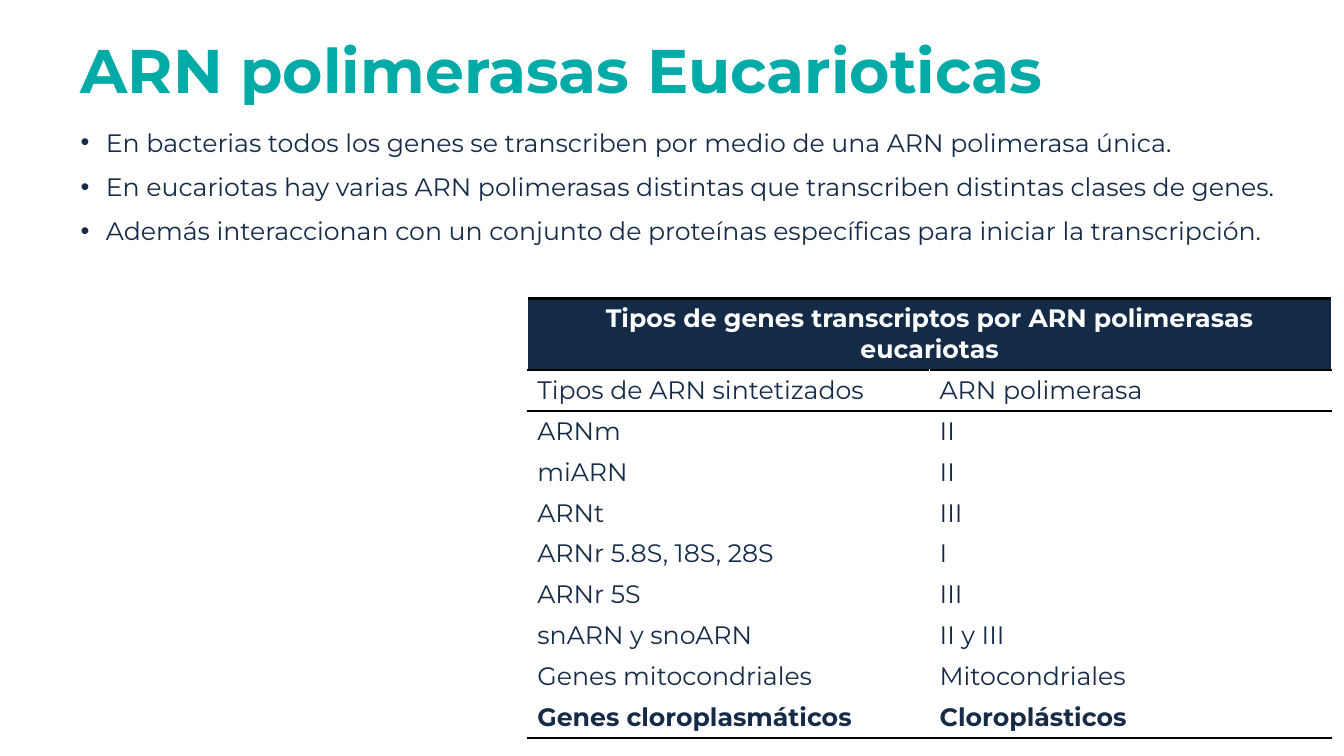
from lxml.etree import SubElement
from pptx import Presentation
from pptx.dml.color import RGBColor
from pptx.enum.text import MSO_ANCHOR, MSO_AUTO_SIZE, PP_ALIGN
from pptx.oxml import parse_xml
from pptx.oxml.ns import nsdecls, qn
from pptx.util import Inches, Pt

TEAL = RGBColor(0x00, 0xAA, 0xA7)
NAVY = RGBColor(0x15, 0x2B, 0x48)
HEADER_NAVY = RGBColor(0x14, 0x2B, 0x48)
WHITE = RGBColor(0xFF, 0xFF, 0xFF)
BLACK = RGBColor(0x00, 0x00, 0x00)

STATEMENTS = [
    "En bacterias todos los genes se transcriben por medio de una ARN polimerasa única.",
    "En eucariotas hay varias ARN polimerasas distintas que transcriben distintas clases de genes.",
    "Además interaccionan con un conjunto de proteínas específicas para iniciar la transcripción.",
]
TABLE_HEADING = "Tipos de genes transcriptos por ARN polimerasas eucariotas"
GENE_TYPES = [
    ("Tipos de ARN sintetizados", "ARN polimerasa"),
    ("ARNm", "II"),
    ("miARN", "II"),
    ("ARNt", "III"),
    ("ARNr 5.8S, 18S, 28S", "I"),
    ("ARNr 5S", "III"),
    ("snARN y snoARN", "II y III"),
    ("Genes mitocondriales", "Mitocondriales"),
    ("Genes cloroplasmáticos", "Cloroplásticos"),
]


class SlideBuilder:
    """Holds the text style and the slide being built."""

    font_name = "Montserrat"
    text_size = 18

    def __init__(self, slide):
        self.slide = slide

    def style(self, paragraph, color, size=text_size, bold=False):
        for run in paragraph.runs:
            run.font.name = self.font_name
            run.font.size = Pt(size)
            run.font.bold = bold
            run.font.color.rgb = color

    def place(self, holder, left, top, width, height):
        holder.left, holder.top = Inches(left), Inches(top)
        holder.width, holder.height = Inches(width), Inches(height)
        holder.text_frame.word_wrap = True
        holder.text_frame.auto_size = MSO_AUTO_SIZE.NONE
        return holder.text_frame

    def title(self, text, *box):
        frame = self.place(self.slide.shapes.title, *box)
        frame.text = text
        frame.vertical_anchor = MSO_ANCHOR.MIDDLE
        heading = frame.paragraphs[0]
        heading.alignment = PP_ALIGN.LEFT
        heading.line_spacing = 0.9
        self.style(heading, TEAL, 44, True)

    def bullets(self, statements, *box):
        frame = self.place(self.slide.placeholders[1], *box)
        frame.text = "\n".join(statements)
        for index, paragraph in enumerate(frame.paragraphs):
            properties = paragraph._p.get_or_add_pPr()
            properties.set("marL", str(Inches(0.25)))
            properties.set("indent", str(-Inches(0.25)))
            SubElement(properties, qn("a:buFont"), typeface="Arial")
            SubElement(properties, qn("a:buChar"), char="•")
            paragraph.alignment = PP_ALIGN.JUSTIFY
            paragraph.space_before = Pt(10 if index else 0)
            self.style(paragraph, NAVY)

    def border(self, cell, *sides):
        for position, side in enumerate(sides):
            line = parse_xml(
                f'<a:{side} {nsdecls("a")} w="{Pt(2)}"><a:solidFill>'
                f'<a:srgbClr val="{BLACK}"/></a:solidFill></a:{side}>'
            )
            cell._tc.get_or_add_tcPr().insert(position, line)

    def cell(self, cell, text, fill, color, bold=False):
        cell.text = text
        cell.vertical_anchor = MSO_ANCHOR.MIDDLE
        cell.fill.solid()
        cell.fill.fore_color.rgb = fill
        self.style(cell.text_frame.paragraphs[0], color, bold=bold)

    def table(self, heading, entries, left, top, width, heading_height, row_height):
        last = len(entries)
        height = heading_height + row_height * last
        table = self.slide.shapes.add_table(
            last + 1, 2, Inches(left), Inches(top), Inches(width), Inches(height)
        ).table
        table.first_row = table.horz_banding = False
        for row in table.rows:
            row.height = Inches(row_height)
        table.rows[0].height = Inches(heading_height)

        banner = table.cell(0, 0)
        banner.merge(table.cell(0, 1))
        self.cell(banner, heading, HEADER_NAVY, WHITE, True)
        banner.text_frame.paragraphs[0].alignment = PP_ALIGN.CENTER
        for number, entry in enumerate(entries, 1):
            for column, text in enumerate(entry):
                self.cell(table.cell(number, column), text, WHITE, NAVY, number == last)
        for column in range(2):
            self.border(table.cell(0, column), "lnT", "lnB")
            self.border(table.cell(1, column), "lnT")
            self.border(table.cell(last, column), "lnB")


def main():
    presentation = Presentation()
    presentation.slide_width = Inches(13.33)
    presentation.slide_height = Inches(7.5)
    builder = SlideBuilder(presentation.slides.add_slide(presentation.slide_layouts[1]))
    builder.title("ARN polimerasas Eucarioticas", 0.7, 0.19, 11.89, 1.08)
    builder.bullets(STATEMENTS, 0.7, 1.21, 12.28, 1.37)
    builder.table(TABLE_HEADING, GENE_TYPES, 5.23, 2.96, 7.98, 0.7, 0.4)
    presentation.save("out.pptx")


if __name__ == "__main__":
    main()
